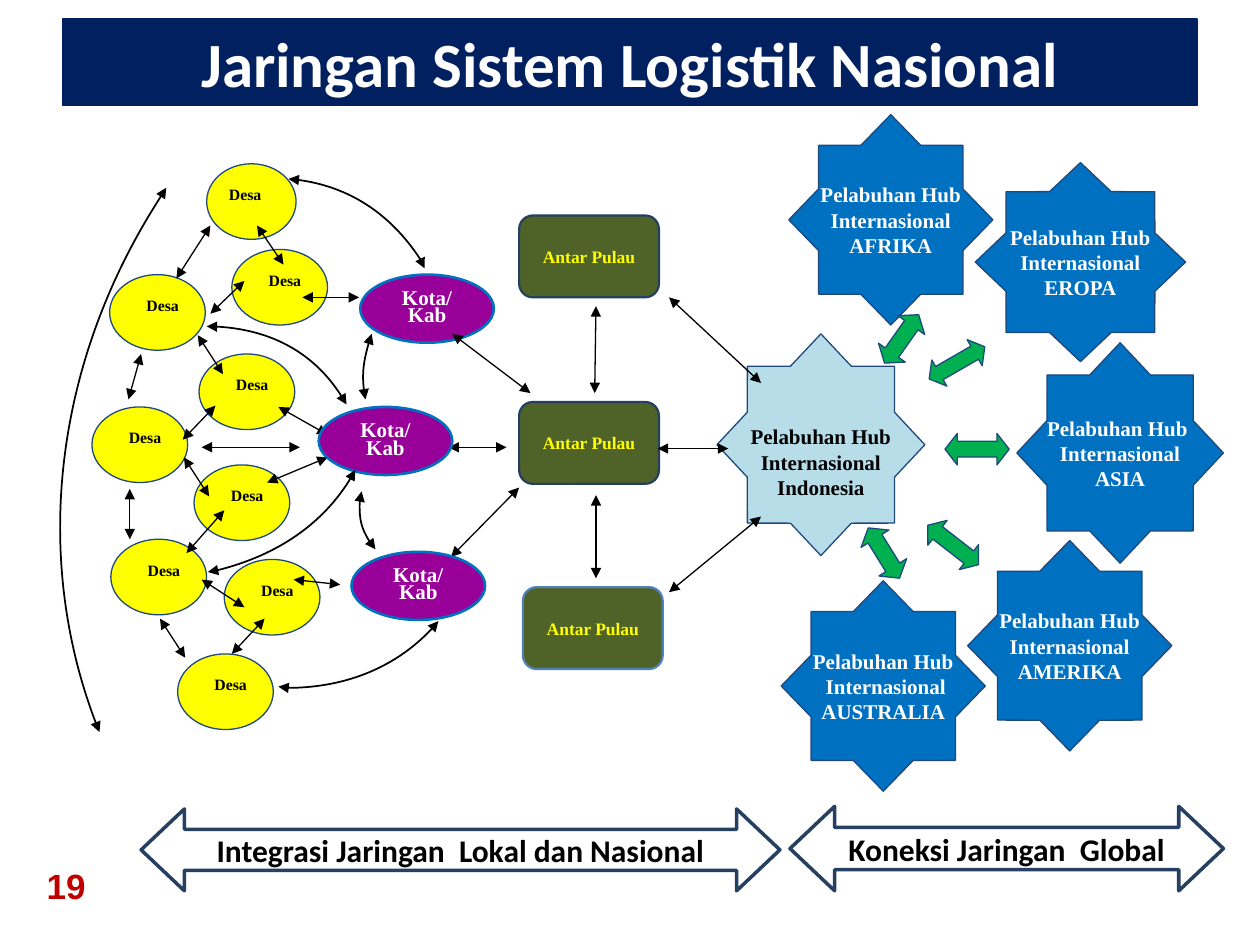
from typing import NamedTuple

import pptx
import pptx.dml.color
import pptx.enum.shapes
import pptx.enum.text
import pptx.oxml
import pptx.util
from pptx.oxml.ns import qn

Inches, Pt = pptx.util.Inches, pptx.util.Pt
SHAPE = pptx.enum.shapes.MSO_SHAPE
ALIGN = pptx.enum.text.PP_ALIGN
ANCHOR = pptx.enum.text.MSO_ANCHOR
SERIF = "Times New Roman"
BLUE, EDGE, BLACK, WHITE = "0070C0", "1F497D", "000000", "FFFFFF"


class Box(NamedTuple):
    x: float
    y: float
    w: float
    h: float


class Star(NamedTuple):
    box: Box
    lines: list[str]
    fill: str = BLUE
    color: str = WHITE
    top: float = 0


class Link(NamedTuple):
    x1: float
    y1: float
    x2: float
    y2: float


class GreenArrow(NamedTuple):
    box: Box
    rotation: float


def rgb(color: str) -> pptx.dml.color.RGBColor:
    return pptx.dml.color.RGBColor.from_string(color)


def write(sp, lines: list[str], *, size: float, color: str, font: str = SERIF,
          align=ALIGN.CENTER, anchor=ANCHOR.MIDDLE,
          insets=(0.1, 0.05, 0.1, 0.05), spacing: float | None = None) -> None:
    tf = sp.text_frame
    tf.word_wrap = True
    tf.vertical_anchor = anchor
    tf.margin_left, tf.margin_top, tf.margin_right, tf.margin_bottom = map(Inches, insets)
    for i, line in enumerate(lines):
        p = tf.add_paragraph() if i else tf.paragraphs[0]
        p.alignment = align
        if spacing:
            p.line_spacing = spacing
        r = p.add_run()
        r.text = line
        r.font.name, r.font.size, r.font.bold = font, Pt(size), True
        r.font.color.rgb = rgb(color)


def shape(s, kind, box: Box, fill: str, line: str, width: float = 0.75,
          adjustments=(), rotation: float = 0):
    sp = s.shapes.add_shape(kind, *map(Inches, box))
    sp.shadow.inherit = False
    sp.fill.solid()
    sp.fill.fore_color.rgb = rgb(fill)
    sp.line.color.rgb = rgb(line)
    sp.line.width = Pt(width)
    sp.rotation = rotation
    for i, value in enumerate(adjustments):
        sp.adjustments[i] = value
    return sp


def double_headed(sp, width: float) -> None:
    """Style a line in black with an arrowhead at both ends."""
    sp.line.color.rgb = rgb(BLACK)
    sp.line.width = Pt(width)
    ln = sp.line._get_or_add_ln()
    for end in ("a:headEnd", "a:tailEnd"):
        pptx.oxml.ns  # namespaces come from pptx's own map
        ln.append(pptx.oxml.xmlchemy.OxmlElement(end))
        ln[-1].set("type", "triangle")


def link(s, ends: Link) -> None:
    sp = s.shapes.add_connector(pptx.enum.shapes.MSO_CONNECTOR.STRAIGHT, *map(Inches, ends))
    double_headed(sp, 0.75)
    sp._element.spPr.append(pptx.oxml.xmlchemy.OxmlElement("a:effectLst"))


def curve(s, points: list[tuple[float, float]]) -> None:
    """Draw start, two control points, curve end and a short straight tip."""
    emu = [(Inches(x), Inches(y)) for x, y in points]
    fb = s.shapes.build_freeform(*emu[0])
    fb.add_line_segments(emu[1:], close=False)
    sp = fb.convert_to_shape()
    sp.shadow.inherit = False
    sp.fill.background()
    double_headed(sp, 1)
    segments = list(sp._element.iter(qn("a:lnTo")))[:3]
    bezier = pptx.oxml.xmlchemy.OxmlElement("a:cubicBezTo")
    segments[0].addprevious(bezier)
    for segment in segments:
        bezier.append(segment[0])
        segment.getparent().remove(segment)


def village(s, x: float, y: float, align=ALIGN.RIGHT, w: float = 0.76) -> None:
    sp = shape(s, SHAPE.OVAL, Box(x, y, w, 0.6), "FFFF00", EDGE)
    write(sp, ["Desa"], size=9, color=BLACK, align=align, anchor=ANCHOR.TOP,
          insets=(0, 0.08, 0.1, 0))


def city(s, x: float, y: float) -> None:
    sp = shape(s, SHAPE.OVAL, Box(x, y, 1.06, 0.54), "990099", BLUE, 1.5)
    write(sp, ["Kota/", "Kab"], size=12, color=WHITE, spacing=0.7)


def island(s, x: float, y: float, line: str) -> None:
    sp = shape(s, SHAPE.ROUNDED_RECTANGLE, Box(x, y, 1.11, 0.65), "4F6228", line, 1.25)
    write(sp, ["Antar Pulau"], size=10, color="FFFF00")


def hub(s, star: Star) -> None:
    sp = shape(s, SHAPE.STAR_8_POINT, star.box, star.fill, EDGE, adjustments=[0.383])
    write(sp, star.lines, size=12, color=star.color, insets=(0, star.top, 0, 0))


def scope(s, box: Box, label: str) -> None:
    sp = shape(s, SHAPE.LEFT_RIGHT_ARROW, box, WHITE, "254061", 2, [0.5, 0.529])
    write(sp, [label], size=18, color=BLACK, font="Calibri")


VILLAGES = [(1.41, 5.19), (0.88, 4.28), (0.73, 3.23), (1.78, 4.44),
            (1.54, 3.69), (1.58, 2.81), (1.84, 1.98), (0.87, 2.18)]
ISLANDS = [(4.12, 1.71, "243F60"), (4.12, 3.19, "243F60"), (4.15, 4.66, "4F81BD")]
PORT, PORT_WIDE = "Pelabuhan Hub Internasional", "Pelabuhan Hub  Internasional"
HUBS = [
    Star(Box(7.74, 1.29, 1.67, 1.58), [PORT, "EROPA"]),
    Star(Box(8.07, 2.72, 1.64, 1.75), [PORT_WIDE, "ASIA"]),
    Star(Box(7.68, 4.29, 1.62, 1.67), [PORT, "AMERIKA"]),
    Star(Box(5.69, 2.65, 1.65, 1.76), ["Pelabuhan Hub", "Internasional Indonesia"],
         "B6DDE8", BLACK, 0.27),
    Star(Box(6.26, 0.91, 1.62, 1.67), [PORT, "AFRIKA"]),
    Star(Box(6.2, 4.61, 1.62, 1.67), [PORT_WIDE, "AUSTRALIA"]),
]
GREEN_ARROWS = [
    GreenArrow(Box(7.34, 2.76, 0.51, 0.24), 150), GreenArrow(Box(7.5, 3.44, 0.51, 0.25), 0),
    GreenArrow(Box(7.31, 4.2, 0.51, 0.25), 217.8), GreenArrow(Box(6.92, 2.56, 0.47, 0.26), 125.2),
    GreenArrow(Box(6.78, 4.26, 0.47, 0.26), 58.1),
]
LINKS = [
    Link(5.31, 2.36, 6.04, 3.04), Link(5.31, 4.7, 6.04, 4.1), Link(5.22, 3.56, 5.78, 3.56),
    Link(2.38, 3.55, 1.6, 3.55), Link(4.21, 3.12, 3.59, 2.65), Link(4.12, 3.87, 3.58, 4.42),
    Link(4.02, 3.55, 3.56, 3.55), Link(4.73, 2.43, 4.72, 3.12), Link(4.73, 3.93, 4.73, 4.59),
    Link(1.67, 1.79, 1.4, 2.21), Link(1.12, 2.81, 1.02, 3.17), Link(1.03, 3.88, 1.03, 4.28),
    Link(1.27, 4.91, 1.47, 5.22), Link(2.04, 1.79, 2.25, 2.1), Link(1.46, 3.63, 1.66, 3.94),
    Link(1.57, 2.66, 1.77, 2.97), Link(1.94, 4.82, 1.6, 4.6), Link(1.78, 4.05, 1.48, 4.39),
    Link(2.1, 4.91, 1.84, 5.19), Link(1.71, 3.22, 1.45, 3.49), Link(2.6, 3.45, 2.21, 3.23),
    Link(2.6, 3.63, 2.12, 3.83), Link(2.85, 2.36, 2.4, 2.36), Link(2.7, 4.64, 2.33, 4.6),
    Link(1.94, 2.23, 1.67, 2.49),
]
CURVES = [
    [(2.9, 3.17), (2.87, 3.04), (2.88, 2.86), (2.94, 2.68), (2.95, 2.65)],
    [(2.98, 4.36), (2.88, 4.25), (2.84, 4.09), (2.86, 3.92), (2.87, 3.9)],
    [(1.64, 2.59), (2.1, 2.59), (2.5, 2.8), (2.72, 3.16), (2.75, 3.21)],
    [(2.82, 3.73), (2.62, 4.11), (2.21, 4.41), (1.71, 4.53), (1.65, 4.54)],
    [(2.29, 1.42), (2.72, 1.45), (3.11, 1.7), (3.35, 2.08), (3.37, 2.13)],
    [(3.48, 4.93), (3.21, 5.26), (2.76, 5.46), (2.28, 5.46), (2.21, 5.45)],
    [(0.79, 5.81), (0.26, 4.5), (0.42, 2.94), (1.22, 1.65), (1.32, 1.49)],
]


def main() -> None:
    prs = pptx.Presentation()
    prs.slide_width, prs.slide_height = Inches(10), Inches(7.5)
    s = prs.slides.add_slide(prs.slide_layouts[6])

    title = shape(s, SHAPE.RECTANGLE, Box(0.5, 0.15, 9, 0.69), "002060", "002060")
    write(title, ["Jaringan Sistem Logistik Nasional"], size=36, color=WHITE, font="Calibri")
    scope(s, Box(1.12, 6.42, 5.07, 0.65), "Integrasi Jaringan  Lokal dan Nasional")
    scope(s, Box(6.27, 6.4, 3.44, 0.67), "Koneksi Jaringan  Global")

    village(s, 1.64, 1.3, ALIGN.CENTER, 0.71)
    for x, y in VILLAGES:
        village(s, x, y)
    city(s, 2.86, 2.18)
    for x, y, line in ISLANDS:
        island(s, x, y, line)
    for star in HUBS:
        hub(s, star)
    for arrow in GREEN_ARROWS:
        shape(s, SHAPE.LEFT_RIGHT_ARROW, arrow.box, "00B050", EDGE,
              adjustments=[0.5, 0.39], rotation=arrow.rotation)
    for ends in LINKS:
        link(s, ends)
    city(s, 2.79, 4.38)
    city(s, 2.53, 3.23)
    for points in CURVES:
        curve(s, points)

    number = s.shapes.add_textbox(*map(Inches, (0.23, 6.72, 0.62, 0.62)))
    write(number, ["19"], size=20, color="C00000", font="Arial", align=ALIGN.LEFT,
          insets=(0.14, 0.07, 0.14, 0.07))
    prs.save("out.pptx")


if __name__ == "__main__":
    main()
